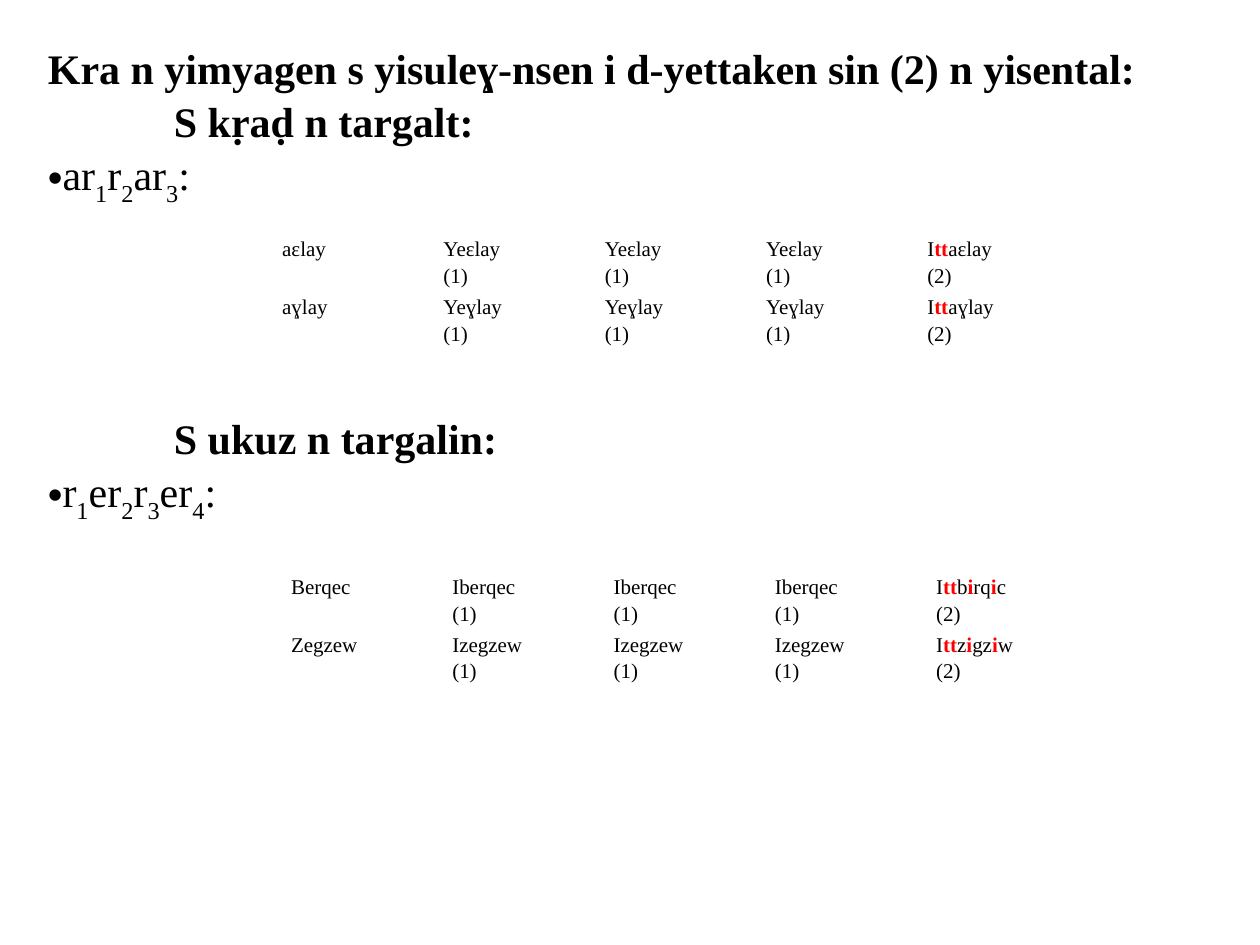
"""Build a slide on Kabyle verbs whose stems take two themes."""
import pptx
import pptx.dml.color
import pptx.enum.text
import pptx.oxml
import pptx.oxml.ns
import pptx.util

Inches = pptx.util.Inches
Pt = pptx.util.Pt
FONT = "Times New Roman"
COLORS = {"text": "000000", "accent": "FF0000"}


def add_runs(paragraph, marked_text, size, bold=False):
    """Add runs split at asterisks and return those between a pair."""
    runs = []
    for part in marked_text.split("*"):
        run = paragraph.add_run()
        run.text = part
        run.font.name = FONT
        run.font.size = Pt(size)
        run.font.bold = bold
        run.font.color.rgb = pptx.dml.color.RGBColor.from_string(COLORS["text"])
        runs.append(run)
    return runs[1::2]


def add_property(paragraph, tag, **attributes):
    """Append a child element to the paragraph properties."""
    properties = paragraph._p.get_or_add_pPr()
    element = pptx.oxml.parse_xml(f"<a:{tag} {pptx.oxml.ns.nsdecls('a')}/>")
    for name, value in attributes.items():
        element.set(name, value)
    properties.append(element)


presentation = pptx.Presentation()
presentation.slide_width = Inches(10)
presentation.slide_height = Inches(7.5)
slide = presentation.slides.add_slide(presentation.slide_layouts[1])
title = slide.shapes.title
title.element.getparent().remove(title.element)

body = slide.placeholders[1]
body.left, body.top = Inches(0.28), Inches(0.29)
body.width, body.height = Inches(9.45), Inches(5.35)
text_frame = body.text_frame
text_frame.word_wrap = True
text_frame.auto_size = pptx.enum.text.MSO_AUTO_SIZE.NONE
text_frame.vertical_anchor = pptx.enum.text.MSO_ANCHOR.TOP

lines = [
    ("heading", "Kra n yimyagen s yisuleɣ-nsen i d-yettaken sin (2) n yisental:", 0),
    ("subheading", "S kṛaḍ n targalt:", 1),
    ("pattern", "ar*1*r*2*ar*3*:", 1.5),
    ("subheading", "S ukuz n targalin:", 117),
    ("pattern", "r*1*er*2*r*3*er*4*:", 1.5),
]
for index, (role, text, space_before) in enumerate(lines):
    paragraph = text_frame.add_paragraph() if index else text_frame.paragraphs[0]
    paragraph.space_before = Pt(space_before)
    properties = paragraph._p.get_or_add_pPr()
    properties.set("marL", str(Inches(1 if role == "subheading" else 0)))
    properties.set("indent", "0")
    if role == "pattern":
        add_property(paragraph, "buChar", char="•")
    else:
        add_property(paragraph, "buNone")
    for subscript in add_runs(paragraph, text, 24, bold=role != "pattern"):
        subscript.font._element.set("baseline", "-30000")

tables = [
    (2.17, 1.86, [("aɛlay", "Yeɛlay", "I*tt*aɛlay"),
                  ("aɣlay", "Yeɣlay", "I*tt*aɣlay")]),
    (2.24, 4.54, [("Berqec", "Iberqec", "I*tt*b*i*rq*i*c"),
                  ("Zegzew", "Izegzew", "I*tt*z*i*gz*i*w")]),
]
for left, top, verbs in tables:
    table = slide.shapes.add_table(
        len(verbs), 5, Inches(left), Inches(top), Inches(6.4), Inches(0.92)
    ).table
    table.first_row = False
    table.horz_banding = False
    for row, (verb, first_theme, second_theme) in enumerate(verbs):
        entries = [[verb]] + [[first_theme, "(1)"]] * 3 + [[second_theme, "(2)"]]
        for column, entry in enumerate(entries):
            cell = table.cell(row, column)
            cell.fill.background()
            cell.margin_left = cell.margin_right = Inches(0.07)
            cell.margin_top = cell.margin_bottom = 0
            for index, text in enumerate(entry):
                cell_frame = cell.text_frame
                paragraph = cell_frame.add_paragraph() if index else cell_frame.paragraphs[0]
                paragraph.alignment = pptx.enum.text.PP_ALIGN.JUSTIFY
                paragraph.line_spacing = 1.15
                for accent in add_runs(paragraph, text, 12):
                    accent.font.bold = True
                    accent.font.color.rgb = pptx.dml.color.RGBColor.from_string(COLORS["accent"])

presentation.save("out.pptx")
